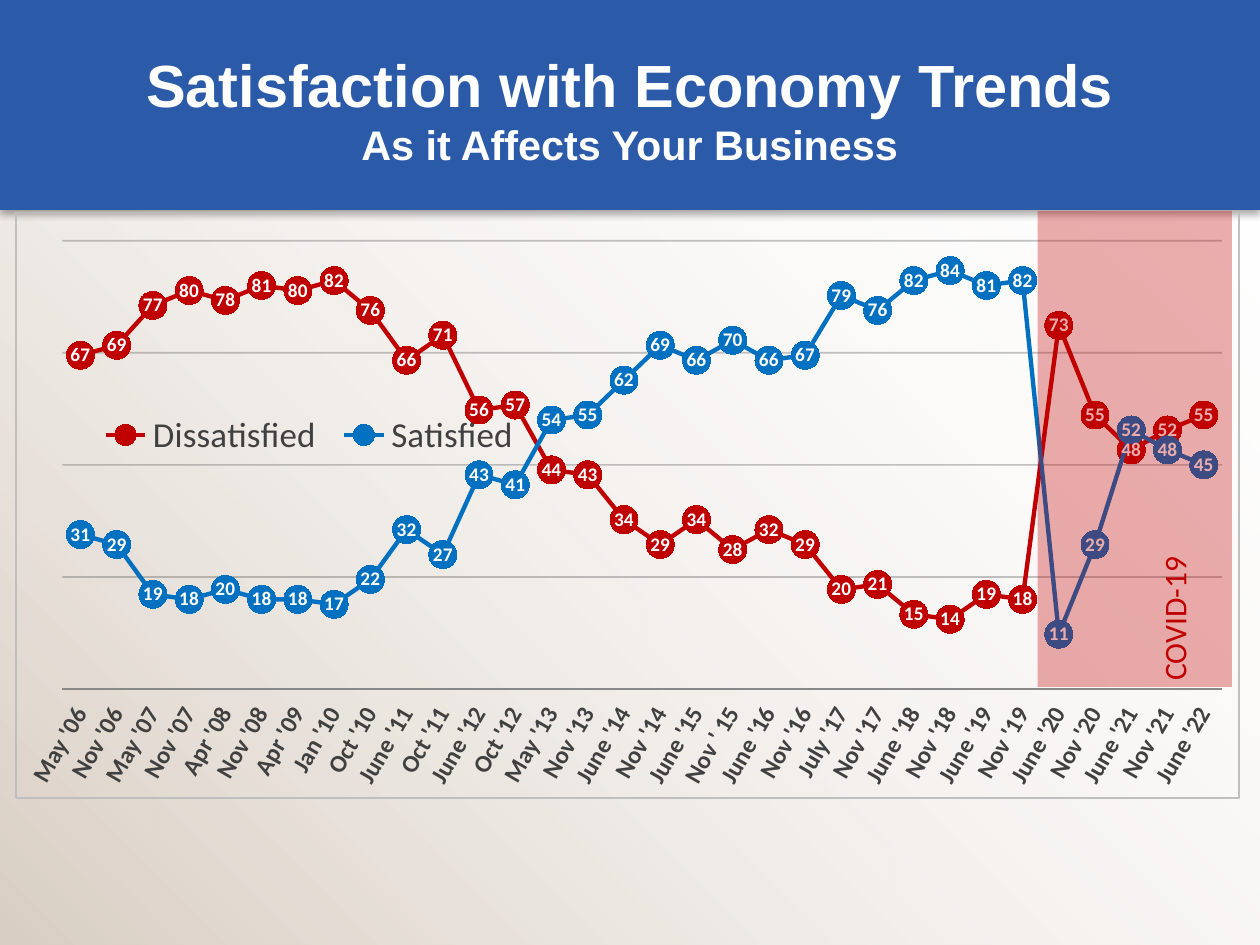
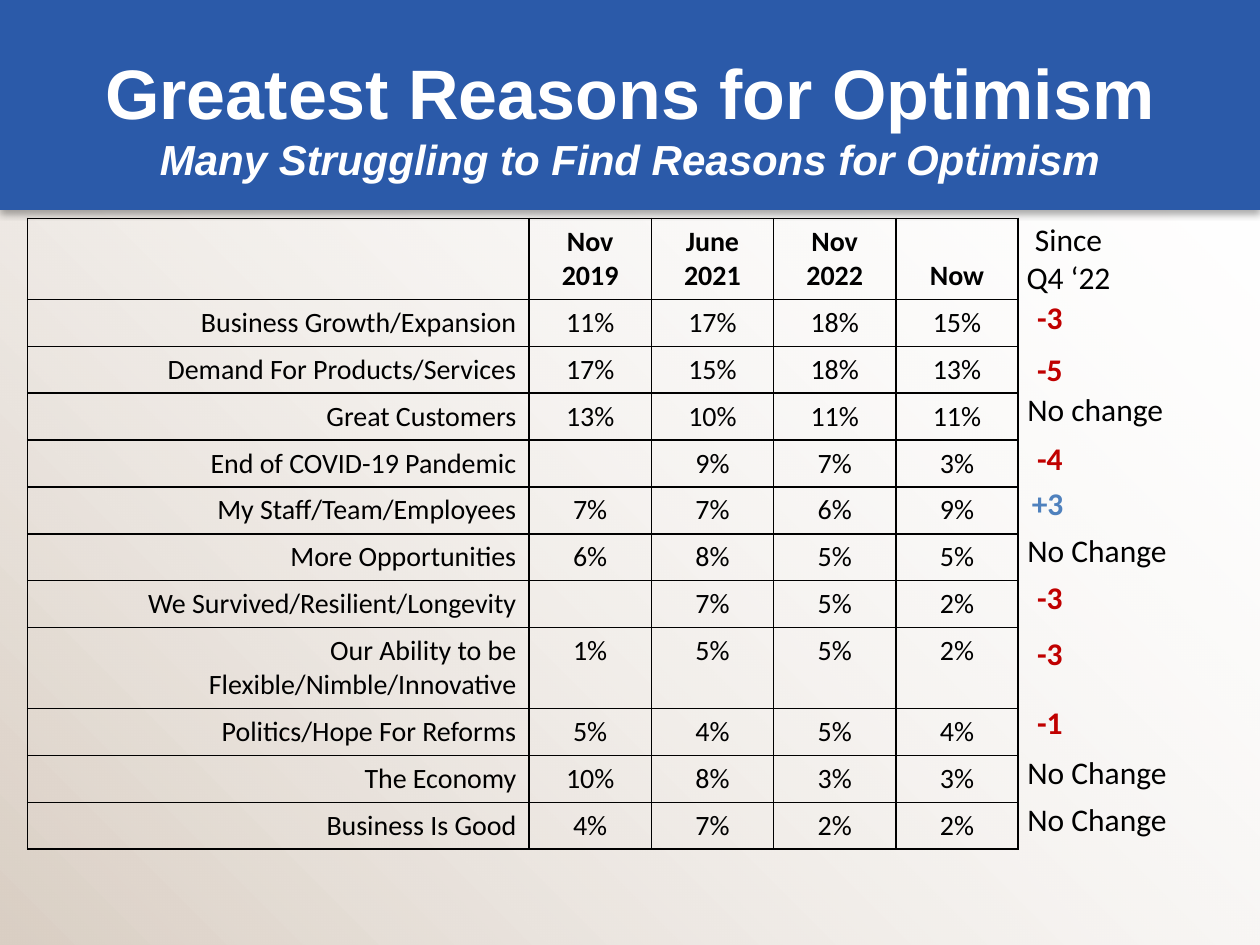
import pptx
import pptx.chart.data
import pptx.dml.color
import pptx.enum.chart
import pptx.enum.shapes
import pptx.enum.text
import pptx.oxml
import pptx.oxml.ns
import pptx.util
from dataclasses import dataclass

Pt = pptx.util.Pt
qn = pptx.oxml.ns.qn
RGB = pptx.dml.color.RGBColor.from_string
PP_ALIGN = pptx.enum.text.PP_ALIGN
ANCHOR = pptx.enum.text.MSO_ANCHOR
XL = pptx.enum.chart

# ---- Content ----
TREND_TITLE = ("Satisfaction with Economy Trends", "As it Affects Your Business")
REASONS_TITLE = ("Greatest Reasons for Optimism",
                 "Many Struggling to Find Reasons for Optimism")
SURVEYS = ["May '06", "Nov '06", "May '07", "Nov '07", "Apr '08", "Nov '08", "Apr '09",
           "Jan '10", "Oct '10", "June '11", "Oct '11", "June '12", "Oct '12", "May '13",
           "Nov '13", "June '14", "Nov '14", "June '15", "Nov ' 15", "June '16", "Nov '16",
           "July '17", "Nov '17", "June '18", "Nov '18", "June '19", "Nov '19", "June '20",
           "Nov '20", "June '21", "Nov '21", "June '22"]
TRENDS = {
    "Dissatisfied": [67, 69, 77, 80, 78, 81, 80, 82, 76, 66, 71, 56, 57, 44, 43, 34,
                     29, 34, 28, 32, 29, 20, 21, 15, 14, 19, 18, 73, 55, 48, 52, 55],
    "Satisfied": [31, 29, 19, 18, 20, 18, 18, 17, 22, 32, 27, 43, 41, 54, 55, 62,
                  69, 66, 70, 66, 67, 79, 76, 82, 84, 81, 82, 11, 29, 52, 48, 45],
}
REASONS = [
    ("", "Nov 2019", "June 2021", "Nov\n2022", "Now"),
    ("Business Growth/Expansion", "11%", "17%", "18%", "15%"),
    ("Demand For Products/Services", "17%", "15%", "18%", "13%"),
    ("Great Customers", "13%", "10%", "11%", "11%"),
    ("End of COVID-19 Pandemic", "", "9%", "7%", "3%"),
    ("My Staff/Team/Employees", "7%", "7%", "6%", "9%"),
    ("More Opportunities", "6%", "8%", "5%", "5%"),
    ("We Survived/Resilient/Longevity", "", "7%", "5%", "2%"),
    ("Our Ability to be Flexible/Nimble/Innovative", "1%", "5%", "5%", "2%"),
    ("Politics/Hope For Reforms", "5%", "4%", "5%", "4%"),
    ("The Economy", "10%", "8%", "3%", "3%"),
    ("Business Is Good", "4%", "7%", "2%", "2%"),
]
TALL_ROWS = (0, 8)
CHANGE_HEAD = "Since\nQ4 ‘22"
CHANGES = [("-3", 167), ("-5", 196.5), ("No change", 219.5), ("-4", 247.5), ("+3", 273),
           ("No Change", 300), ("-3", 327), ("-3", 358.5), ("-1", 398), ("No Change", 427),
           ("No Change", 453.5)]  # text, top


@dataclass(frozen=True)
class Theme:
    band: str = "2B5AA9"
    sand: str = "DACFC4"
    white: str = "FFFFFF"
    black: str = "000000"
    down: str = "C00000"
    up: str = "4F81BD"
    satisfied: str = "0070C0"
    axis_text: str = "404040"
    axis_line: str = "888888"
    grid: str = "666666"
    border: str = "BFBFBF"
    head_font: str = "Arial"
    body_font: str = "Calibri"
    note: float = 18
    cell: float = 16
    legend: float = 20
    category: float = 14
    point: float = 11


T = Theme()
WIDTH, HEIGHT, BAND_H = 720, 540, 120
INSET = 3.6


# ---- Shared helpers ----
def style(font, size, color=T.black, **fmt):
    values = {"size": Pt(size), "name": T.body_font, "bold": False, **fmt}
    for name, value in values.items():
        setattr(font, name, value)
    font.color.rgb = RGB(color)


def xml(text):
    return pptx.oxml.parse_xml(text.replace(
        ">", f' {pptx.oxml.ns.nsdecls("a", "c")}>' if "/>" not in text.split(">")[0] + ">"
        else ">", 1))


def set_alpha(color_parent, percent):
    for color in color_parent.iter(qn("a:srgbClr")):
        color.append(color.makeelement(qn("a:alpha"), {"val": str(percent * 1000)}))


def set_frame(tf, anchor=ANCHOR.TOP, **margins):
    values = {"word_wrap": True, "vertical_anchor": anchor}
    for side in ("left", "top", "right", "bottom"):
        values[f"margin_{side}"] = Pt(margins.get(side, INSET))
    for name, value in values.items():
        setattr(tf, name, value)


def write(tf, text, align, size, color=T.black, **fmt):
    tf.text = text
    for p in tf.paragraphs:
        p.alignment = align
        for r in p.runs:
            style(r.font, size, color, **fmt)


def add_rect(s, x, y, w, h):
    sp = s.shapes.add_shape(pptx.enum.shapes.MSO_SHAPE.RECTANGLE, Pt(x), Pt(y), Pt(w), Pt(h))
    sp.shadow.inherit = False
    sp.line.fill.background()
    return sp


def add_text(s, box, text, align, color=T.black, **fmt):
    sp = s.shapes.add_textbox(*map(Pt, box))
    set_frame(sp.text_frame)
    write(sp.text_frame, text, align, T.note, color, **fmt)


def add_base(prs, lines, sizes, box_h, italic):
    """Blank slide with the gradient ground, the blue band and a two-line title."""
    s = prs.slides.add_slide(prs.slide_layouts[6])
    ground = add_rect(s, 0, 0, WIDTH, HEIGHT)
    ground.fill.gradient()
    ground.fill.gradient_angle = 45
    stops = ground.fill.gradient_stops
    for stop, color, position in zip(stops, (T.sand, T.white), (0, 1)):
        stop.color.rgb = RGB(color)
        stop.position = position
    set_alpha(ground._element.spPr.find(qn("a:gradFill"))[0][-1], 0)

    band = add_rect(s, 0, 0, WIDTH, BAND_H)
    band.fill.solid()
    band.fill.fore_color.rgb = RGB(T.band)
    band._element.spPr.find(qn("a:effectLst")).append(xml(
        f'<a:outerShdw blurRad="{Pt(4)}" dist="{Pt(2.2)}" dir="5400000" rotWithShape="0">'
        f'<a:srgbClr val="{T.black}"><a:alpha val="32000"/></a:srgbClr></a:outerShdw>'))

    tf = s.shapes.add_textbox(Pt(36), Pt(21.6), Pt(648), Pt(box_h)).text_frame
    set_frame(tf, ANCHOR.MIDDLE)
    p = tf.paragraphs[0]
    p.alignment = PP_ALIGN.CENTER
    for i, (text, size) in enumerate(zip(lines, sizes)):
        if i:
            p.add_line_break()
        r = p.add_run()
        r.text = text
        style(r.font, size, T.white, name=T.head_font, bold=True, italic=bool(i and italic))
    return s


# ---- Trend slide ----
def place(parent, index, box, target=""):
    """Give a chart part a fixed place, as fractions of the chart."""
    for old in parent.findall(qn("c:layout")):
        parent.remove(old)
    modes = '<c:xMode val="edge"/><c:yMode val="edge"/>'
    sizes = "".join(f'<c:{k} val="{v}"/>' for k, v in zip("xywh", box))
    parent.insert(index, xml(f"<c:layout><c:manualLayout>{target}{modes}{sizes}"
                             "</c:manualLayout></c:layout>"))


def set_line(line, color, width):
    line.color.rgb = RGB(color)
    line.width = Pt(width)


def style_axes(chart):
    cat, val = chart.category_axis, chart.value_axis
    for axis in (cat, val):
        axis.major_tick_mark = axis.minor_tick_mark = XL.XL_TICK_MARK.NONE
    cat.tick_label_position = XL.XL_TICK_LABEL_POSITION.LOW
    style(cat.tick_labels.font, T.category, T.axis_text, bold=True)
    cat._element.find(qn("c:txPr")).find(qn("a:bodyPr")).set("rot", str(-60 * 60000))
    set_line(cat.format.line, T.axis_line, 1)

    scale = {"minimum_scale": 0, "maximum_scale": 90, "major_unit": 22.5,
             "has_major_gridlines": True,
             "tick_label_position": XL.XL_TICK_LABEL_POSITION.NONE}
    for name, value in scale.items():
        setattr(val, name, value)
    val.format.line.fill.background()
    set_line(val.major_gridlines.format.line, T.grid, 1)
    set_alpha(val._element.find(qn("c:majorGridlines")), 39)
    for old in val._element.findall(qn("c:crossBetween")):
        val._element.remove(old)
    crosses = val._element.find(qn("c:crosses"))
    crosses.addnext(crosses.makeelement(qn("c:crossBetween"), {"val": "between"}))


def add_trend_chart(s):
    data = pptx.chart.data.CategoryChartData()
    data.categories = SURVEYS
    for name, values in TRENDS.items():
        data.add_series(name, values)
    chart = s.shapes.add_chart(XL.XL_CHART_TYPE.LINE_MARKERS, Pt(8.6), Pt(121), Pt(700),
                               Pt(335.5), data).chart
    chart.has_title = False
    style(chart.font, 10)
    style_axes(chart)

    for series, color in zip(chart.plots[0].series, (T.down, T.satisfied)):
        series.smooth = False
        set_line(series.format.line, color, 2.5)
        marker = series.marker
        marker.style, marker.size = XL.XL_MARKER_STYLE.CIRCLE, 16
        marker.format.fill.solid()
        marker.format.fill.fore_color.rgb = RGB(color)
        marker.format.line.color.rgb = RGB(color)
        labels = {"show_value": True, "position": XL.XL_LABEL_POSITION.CENTER,
                  "number_format": "0", "number_format_is_linked": False}
        for name, value in labels.items():
            setattr(series.data_labels, name, value)
        style(series.data_labels.font, T.point, T.white, bold=True)

    chart.has_legend = True
    chart.legend.position = XL.XL_LEGEND_POSITION.RIGHT
    chart.legend.include_in_layout = True
    style(chart.legend.font, T.legend, T.axis_text)
    place(chart.legend._element, 1, (0.06, 0.33, 0.36, 0.1))

    root = chart._chartSpace
    place(root.find(qn("c:chart")).find(qn("c:plotArea")), 0, (0.038, 0.048, 0.948, 0.766),
          '<c:layoutTarget val="inner"/>')
    root.find(qn("c:chart")).addnext(xml(
        f'<c:spPr><a:noFill/><a:ln w="{Pt(1)}"><a:solidFill><a:srgbClr val="{T.border}"/>'
        "</a:solidFill></a:ln></c:spPr>"))


def add_covid_band(s):
    sp = add_rect(s, 512.5, 201, 272, 111)
    sp.rotation = 270
    sp.fill.solid()
    sp.fill.fore_color.rgb = RGB(T.down)
    set_alpha(sp._element.spPr, 32)
    set_frame(sp.text_frame, ANCHOR.BOTTOM, bottom=22.5)
    write(sp.text_frame, "COVID-19", PP_ALIGN.LEFT, T.note, T.down)


# ---- Reasons slide ----
def add_reasons_table(s):
    widths = [286.5] + [69.9] * 4
    heights = [46.3 if i in TALL_ROWS else 26.8 for i in range(len(REASONS))]
    table = s.shapes.add_table(len(heights), len(widths), Pt(15.8), Pt(124.8),
                               Pt(sum(widths)), Pt(sum(heights))).table
    table.first_row = table.horz_banding = False
    for column, width in zip(table.columns, widths):
        column.width = Pt(width)
    for i, (row, height) in enumerate(zip(REASONS, heights)):
        table.rows[i].height = Pt(height)
        for j, text in enumerate(row):
            cell = table.cell(i, j)
            cell.fill.background()
            cell.vertical_anchor = ANCHOR.TOP if i else ANCHOR.BOTTOM
            write(cell.text_frame, text, PP_ALIGN.CENTER if j else PP_ALIGN.RIGHT,
                  T.cell, bold=i == 0)
            if not text:
                end = cell.text_frame.paragraphs[0]._p.get_or_add_endParaRPr()
                end.set("sz", str(T.cell * 100))
            for k, side in enumerate("LRTB"):
                cell._tc.tcPr.insert(k, xml(
                    f'<a:ln{side} w="{Pt(1)}"><a:solidFill><a:srgbClr val="{T.black}"/>'
                    f"</a:solidFill></a:ln{side}>"))


def add_changes(s):
    add_text(s, (581.8, 122.4, 57.6, 51), CHANGE_HEAD, PP_ALIGN.CENTER)
    looks = {"-": (589, T.down, True), "+": (586, T.up, True), "N": (583.5, T.black, False)}
    for text, top in CHANGES:
        left, color, bold = looks[text[0]]
        add_text(s, (left, top, 94, 29), text, PP_ALIGN.LEFT, color, bold=bold)


def main():
    prs = pptx.Presentation()
    prs.slide_width, prs.slide_height = Pt(WIDTH), Pt(HEIGHT)
    s = add_base(prs, TREND_TITLE, (34, 23.6), 80.6, italic=False)
    add_trend_chart(s)
    add_covid_band(s)
    s = add_base(prs, REASONS_TITLE, (40, 24), 90, italic=True)
    add_reasons_table(s)
    add_changes(s)
    prs.save("out.pptx")


if __name__ == "__main__":
    main()
